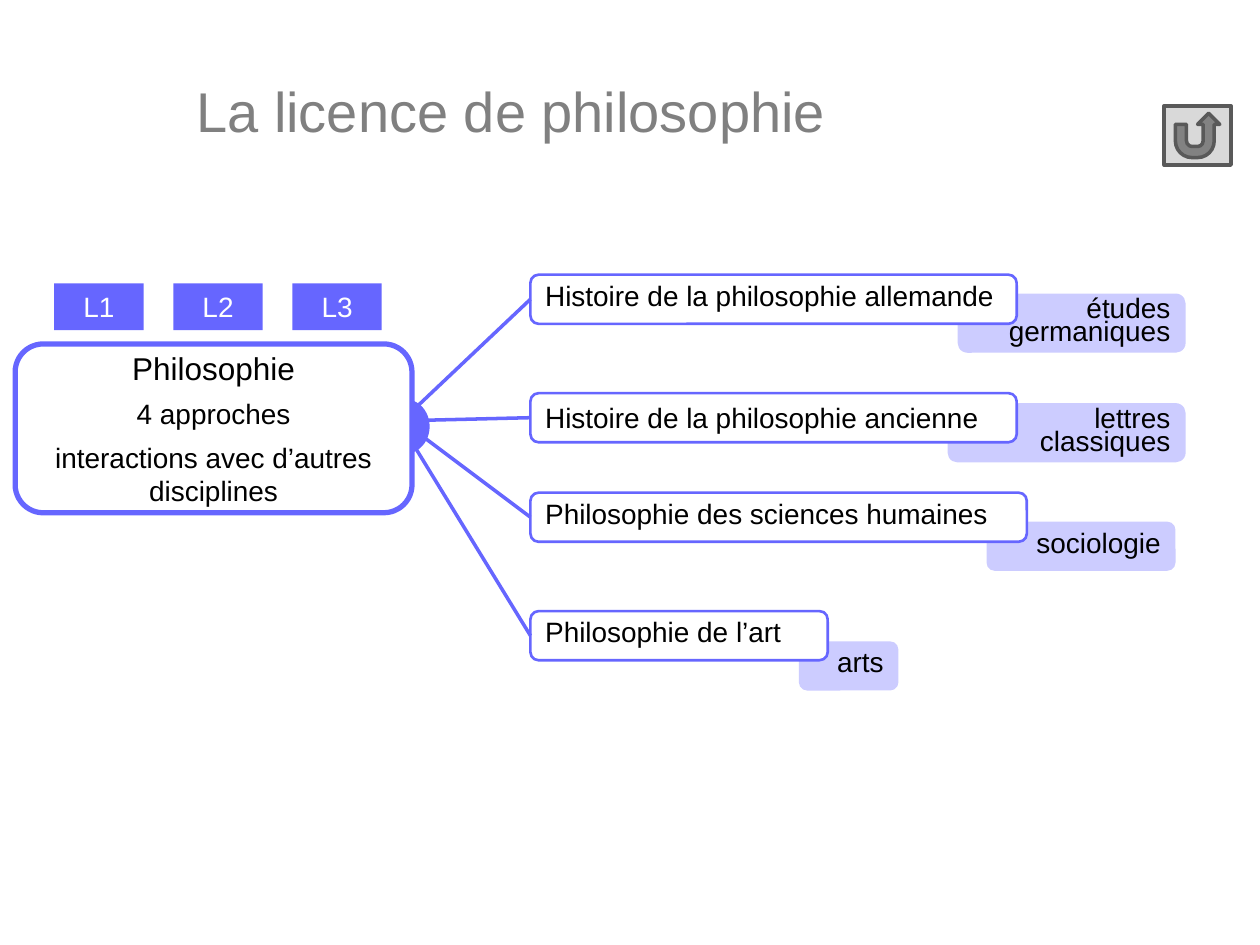
from dataclasses import dataclass
from pptx import Presentation
from pptx.dml.color import RGBColor as Color
from pptx.enum.shapes import MSO_CONNECTOR as Link, MSO_SHAPE as Shape
from pptx.enum.text import MSO_ANCHOR as Anchor, PP_ALIGN as Align
from pptx.oxml.ns import qn
from pptx.util import Inches, Pt
from lxml import etree


@dataclass(frozen=True)
class Theme:
    font: str = "Arial"
    accent: str = "6666FF"
    pale: str = "CCCCFF"
    white: str = "FFFFFF"
    black: str = "000000"
    grey: str = "808080"
    button: str = "D9D9D9"
    button_line: str = "595959"
    title: int = 32
    heading: int = 18
    body: int = 16


THEME = Theme()
TITLE = "La licence de philosophie"
LEVELS = ["L1", "L2", "L3"]
DEGREE = ["Philosophie", "4 approches", "interactions avec d’autres disciplines"]
TIGHT = 0.7
BRANCH_LEFT, BRANCH_HEIGHT = 4.21, 0.39
BRANCHES = [
    ("Histoire de la philosophie allemande", 2.18, 3.86, TIGHT,
     "études germaniques", (7.6, 2.33, 1.81, 0.47), (3.19, 3.34)),
    ("Histoire de la philosophie ancienne", 3.12, 3.86, 1.0,
     "lettres classiques", (7.52, 3.2, 1.89, 0.47), (3.19, 3.34)),
    ("Philosophie des sciences humaines", 3.91, 3.94, TIGHT,
     "sociologie", (7.83, 4.14, 1.5, 0.39), (3.19, 3.34)),
    ("Philosophie de l’art", 4.85, 2.36, TIGHT,
     "arts", (6.34, 5.09, 0.79, 0.39), (3.27, 3.51)),
]


def write(box, lines, sizes, color=THEME.black, align=Align.LEFT,
          spacing=1.0, gap=0, anchor=Anchor.MIDDLE):
    frame = box.text_frame
    frame.word_wrap = True
    frame.vertical_anchor = anchor
    frame.text = "\n".join(lines)
    for index, (para, size) in enumerate(zip(frame.paragraphs, sizes)):
        para.alignment = align
        para.line_spacing = spacing
        para.space_before = Pt(gap if index else 0)
        for span in para.runs:
            span.font.name = THEME.font
            span.font.size = Pt(size)
            span.font.color.rgb = Color.from_string(color)


def add_box(page, kind, place, fill, line=None, width=0):
    box = page.shapes.add_shape(kind, *map(Inches, place))
    box.shadow.inherit = False
    box.fill.solid()
    box.fill.fore_color.rgb = Color.from_string(fill)
    if line:
        box.line.color.rgb = Color.from_string(line)
        box.line.width = Pt(width)
    else:
        box.line.fill.background()
    return box


def add_link(page, start, box):
    x, y = map(Inches, start)
    link = page.shapes.add_connector(Link.STRAIGHT, x, y, box.left, box.top)
    link.end_connect(box, 1)
    link.line.color.rgb = Color.from_string(THEME.accent)
    link.line.width = Pt(2)
    etree.SubElement(link._element.spPr, qn("a:effectLst"))


def main():
    deck = Presentation()
    deck.slide_width, deck.slide_height = Inches(10), Inches(7.5)
    page = deck.slides.add_slide(deck.slide_layouts[6])

    title = page.shapes.add_textbox(*map(Inches, (1.46, 0.28, 8.27, 1.18)))
    write(title, [TITLE], [THEME.title], THEME.grey)

    for _, _, _, _, partner, place, _ in reversed(BRANCHES):
        tag = add_box(page, Shape.ROUNDED_RECTANGLE, place, THEME.pale)
        write(tag, [partner], [THEME.body], align=Align.RIGHT, spacing=TIGHT)

    add_box(page, Shape.OVAL, (3.03, 3.17, 0.38, 0.43), THEME.accent)

    for name, top, width, spacing, _, _, start in BRANCHES:
        branch = add_box(page, Shape.ROUNDED_RECTANGLE,
                         (BRANCH_LEFT, top, width, BRANCH_HEIGHT),
                         THEME.white, THEME.accent, 1.5)
        write(branch, [name], [THEME.body], spacing=spacing)
        add_link(page, start, branch)

    degree = add_box(page, Shape.ROUNDED_RECTANGLE, (0.12, 2.73, 3.15, 1.34),
                     THEME.white, THEME.accent, 3)
    write(degree, DEGREE, [THEME.heading, THEME.body, THEME.body],
          align=Align.CENTER, gap=5.5)

    for index, name in enumerate(LEVELS):
        level = add_box(page, Shape.RECTANGLE,
                        (0.43 + 0.945 * index, 2.25, 0.71, 0.37), THEME.accent)
        write(level, [name], [THEME.body], THEME.white, Align.CENTER,
              anchor=Anchor.TOP)

    add_box(page, Shape.ACTION_BUTTON_RETURN, (9.24, 0.84, 0.53, 0.47),
            THEME.button, THEME.button_line, 2)
    deck.save("out.pptx")


if __name__ == "__main__":
    main()
